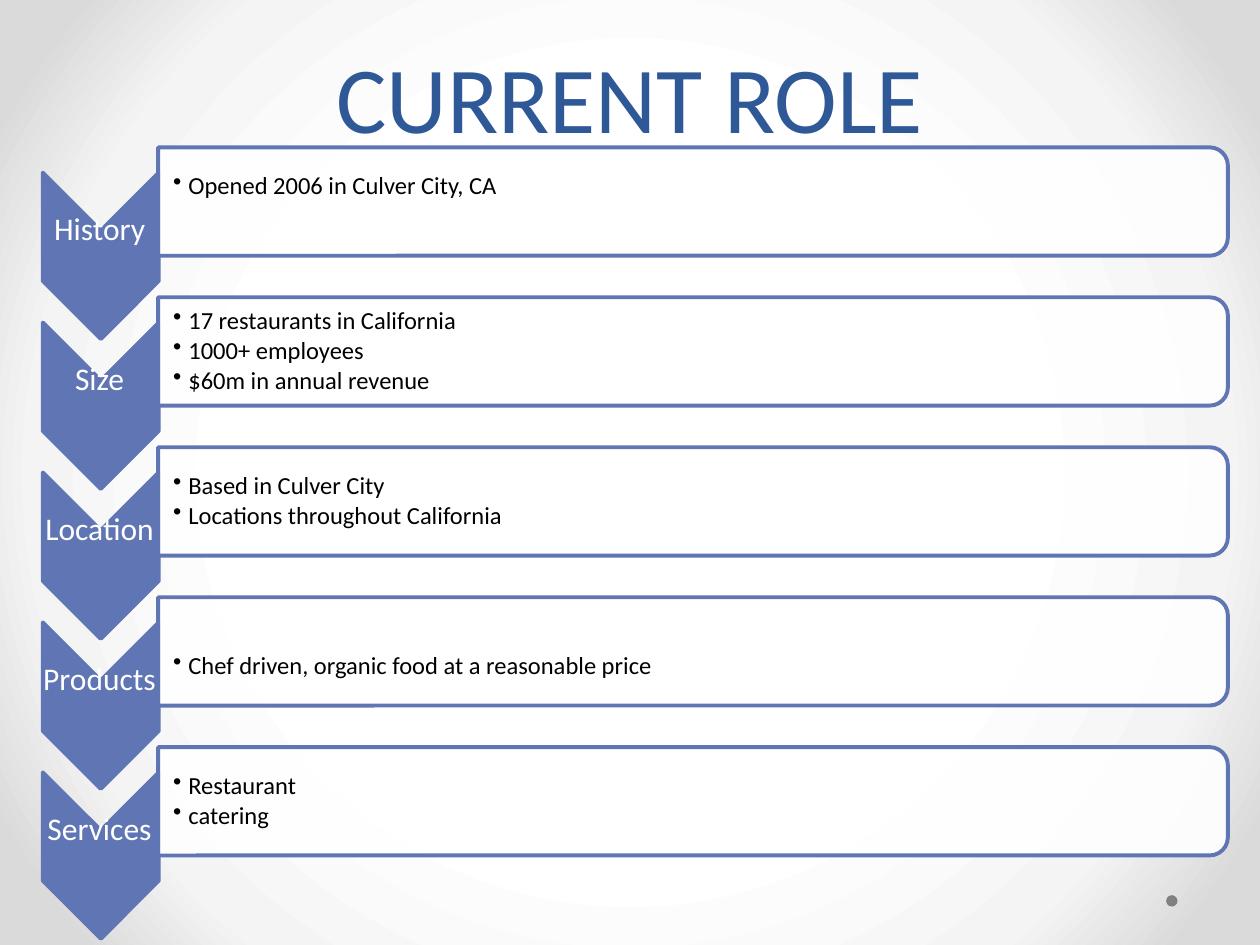
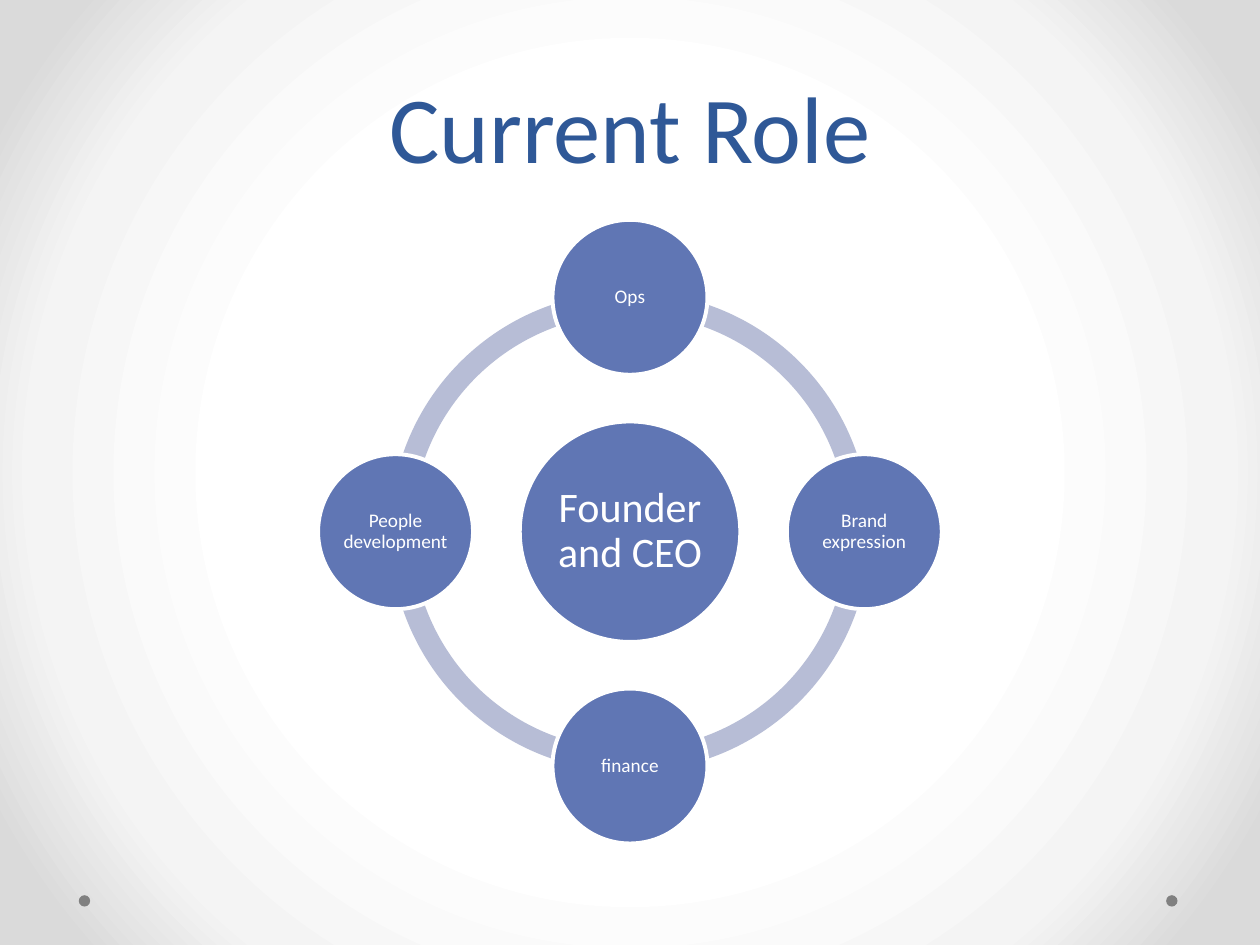
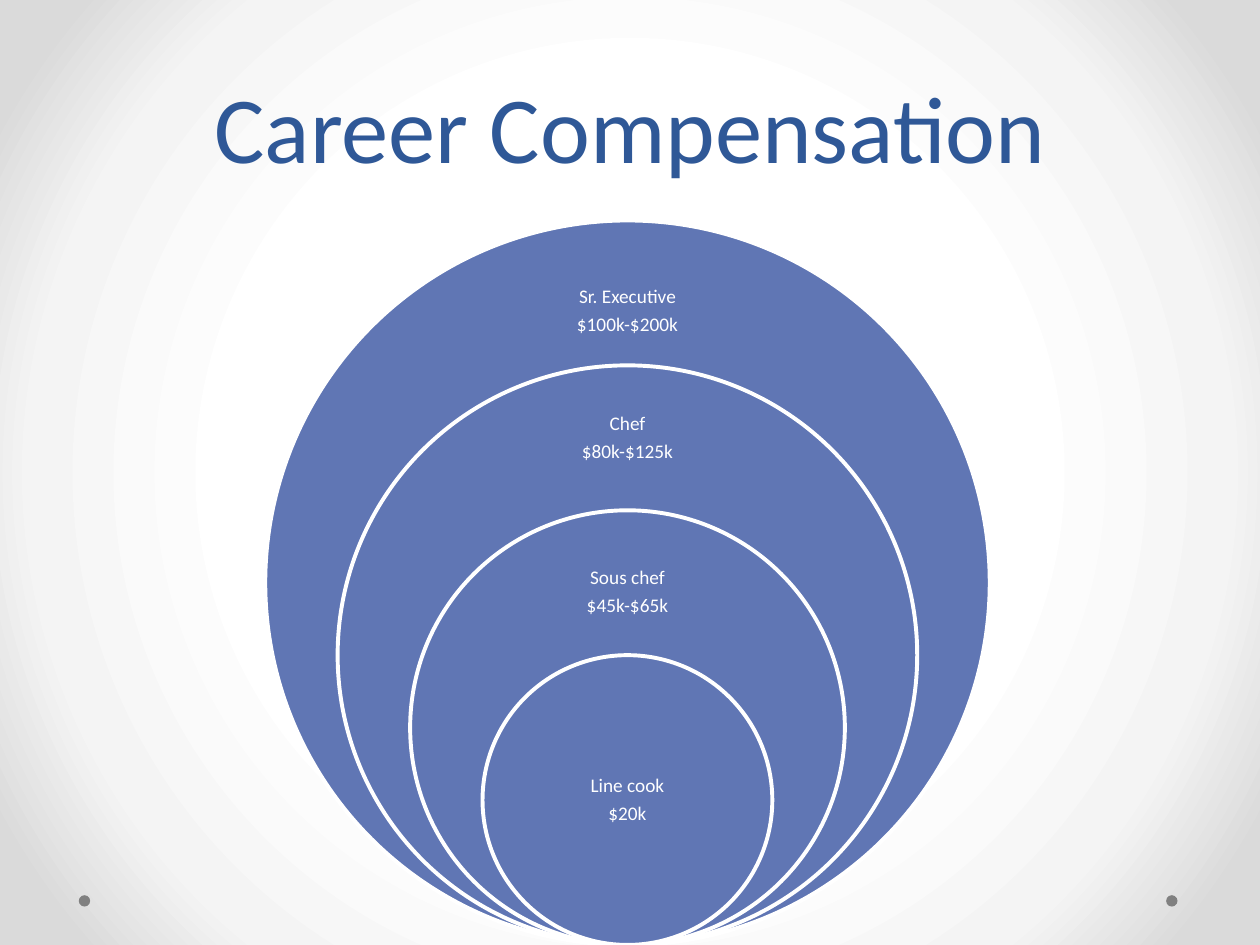
import math

from lxml import etree
from pptx import Presentation
from pptx.dml.color import RGBColor
from pptx.enum import shapes, text
from pptx.oxml import ns
from pptx.util import Inches, Pt

FONT = "Calibri"
COLORS = {
    "title": "2F5897",
    "accent": "6076B4",
    "ring": "B7BDD6",
    "white": "FFFFFF",
    "black": "000000",
    "dot": "808080",
}
BACKGROUND_STOPS = [(50, "FFFFFF"), (76, "F4F4F4"), (92, "DADADA")]

ROLE_ROWS = [  # label, bullets, vertical shift of the bullets
    ("History", ["Opened 2006 in Culver City, CA"], -0.12),
    ("Size", ["17 restaurants in California", "1000+ employees",
              "$60m in annual revenue"], 0),
    ("Location", ["Based in Culver City", "Locations throughout California"], 0),
    ("Products", ["Chef driven, organic food at a reasonable price"], 0.12),
    ("Services", ["Restaurant", "catering"], 0),
]
DUTIES = ["Ops", "Brand expression", "finance", "People development"]
PAY_LEVELS = [  # diameter, label centre, lines
    (5.75, 2.47, ["Sr. Executive", "$100k-$200k"]),
    (4.6, 3.48, ["Chef", "$80k-$125k"]),
    (3.45, 4.7, ["Sous chef", "$45k-$65k"]),
    (2.3, 6.35, ["Line cook", "$20k"]),
]


def rgb(name):
    return RGBColor.from_string(COLORS[name])


def centred_box(center_x, center_y, width, height):
    return [Inches(value) for value in
            (center_x - width / 2, center_y - height / 2, width, height)]


# Shared look
def set_background(master):
    master.background.fill.gradient()
    gradient = master.element.find(".//" + ns.qn("a:gradFill"))
    for child in list(gradient):
        gradient.remove(child)
    stops = etree.SubElement(gradient, ns.qn("a:gsLst"))
    for position, color in BACKGROUND_STOPS:
        stop = etree.SubElement(stops, ns.qn("a:gs"), pos=str(position * 1000))
        etree.SubElement(stop, ns.qn("a:srgbClr"), val=color)
    shade = etree.SubElement(gradient, ns.qn("a:path"))
    shade.set("path", "circle")
    etree.SubElement(shade, ns.qn("a:fillToRect"),
                     l="50000", t="50000", r="50000", b="50000")


def start_slide(presentation, title_text, top=0.17, height=1.33):
    slide = presentation.slides.add_slide(presentation.slide_layouts[5])
    for center_x in (9.3, 0.67):
        add_shape(slide, shapes.MSO_SHAPE.OVAL, (center_x, 7.15, 0.09, 0.09), "dot")
    title = slide.shapes.title
    title.left, title.top = Inches(0.5), Inches(top)
    title.width, title.height = Inches(9), Inches(height)
    frame = title.text_frame
    frame.text = title_text
    frame.auto_size = text.MSO_AUTO_SIZE.NONE
    frame.vertical_anchor = text.MSO_ANCHOR.BOTTOM
    paragraph = frame.paragraphs[0]
    paragraph.alignment = text.PP_ALIGN.CENTER
    paragraph.line_spacing = Pt(58)
    set_font(paragraph, 54, "title")
    return slide


# Elements
def add_shape(slide, kind, box, fill, line=None, rotation=0):
    """Draw a shape; box is centre x, centre y, width, height."""
    shape = slide.shapes.add_shape(kind, *centred_box(*box))
    shape.shadow.inherit = False
    shape.rotation = rotation
    shape.fill.solid()
    shape.fill.fore_color.rgb = rgb(fill)
    if line:
        shape.line.color.rgb = rgb(line)
        shape.line.width = Pt(2.25)
    else:
        shape.line.fill.background()
    return shape


def set_font(paragraph, size, color):
    paragraph.font.name = FONT
    paragraph.font.size = Pt(size)
    paragraph.font.color.rgb = rgb(color)


def write_lines(shape, lines, size, color="white", inset=0.02, spacing=0.35,
                alignment=text.PP_ALIGN.CENTER):
    frame = shape.text_frame
    frame.word_wrap = True
    frame.vertical_anchor = text.MSO_ANCHOR.MIDDLE
    frame.margin_left = frame.margin_right = Inches(inset)
    frame.margin_top = frame.margin_bottom = Inches(inset)
    frame.text = "\n".join(lines)
    for paragraph in frame.paragraphs:
        paragraph.alignment = alignment
        paragraph.line_spacing = 0.9
        paragraph.space_after = Pt(size * spacing)
        set_font(paragraph, size, color)


def add_label(slide, box, lines, size, **style):
    label = slide.shapes.add_textbox(*centred_box(*box))
    write_lines(label, lines, size, **style)
    return label


def add_bullets(slide, box, lines):
    label = add_label(slide, box, lines, 14, color="black", inset=0.01,
                      spacing=0.15, alignment=text.PP_ALIGN.LEFT)
    label.text_frame.margin_left = Inches(0.11)
    for paragraph in label.text_frame.paragraphs:
        properties = paragraph._p.get_or_add_pPr()
        properties.set("marL", str(Inches(0.12)))
        properties.set("indent", str(-Inches(0.12)))
        bullet = etree.Element(ns.qn("a:buChar"), char="•")
        properties.find(ns.qn("a:spcAft")).addnext(bullet)


def set_opacity(shape, percent):
    color = shape.element.spPr.find(ns.qn("a:solidFill"))[0]
    etree.SubElement(color, ns.qn("a:alpha"), val=str(percent * 1000))


def add_role_row(slide, center_y, label, bullets, shift):
    add_shape(slide, shapes.MSO_SHAPE.CHEVRON, (0.8, center_y + 0.43, 1.32, 0.92),
              "accent", "accent", rotation=90)
    add_label(slide, (0.79, center_y + 0.23, 0.92, 0.4), [label], 18, inset=0.01)
    panel = add_shape(slide, shapes.MSO_SHAPE.ROUND_2_SAME_RECTANGLE,
                      (5.5, center_y, 0.86, 8.49), "white", "accent", rotation=90)
    set_opacity(panel, 90)
    add_bullets(slide, (5.49, center_y + shift, 8.45, 0.77), bullets)


def add_circle(slide, center_x, center_y, diameter):
    return add_shape(slide, shapes.MSO_SHAPE.OVAL,
                     (center_x, center_y, diameter, diameter), "accent", "white")


# Slides
def build_role_rows(presentation):
    slide = start_slide(presentation, "CURRENT ROLE", top=0.01, height=1.25)
    for index, row in enumerate(ROLE_ROWS):
        add_role_row(slide, 1.6 + index * 1.19, *row)


def build_role_ring(presentation):
    slide = start_slide(presentation, "Current Role")
    center_x, center_y, radius = 5, 4.22, 1.86
    quarter, full_turn = 54, 216  # arc angles in units of 100000/60000 degrees
    for start in (108, 54, 0, 162):
        arc = add_shape(slide, shapes.MSO_SHAPE.BLOCK_ARC,
                        (center_x, center_y, 3.81, 3.81), "ring")
        arc.adjustments[0] = start
        arc.adjustments[1] = (start + quarter) % full_turn
        arc.adjustments[2] = 0.046
    hub = add_circle(slide, center_x, center_y, 1.75)
    write_lines(hub, ["Founder and CEO"], 24, inset=0.03)
    for index, duty in enumerate(DUTIES):
        angle = math.tau * index / len(DUTIES)
        circle = add_circle(slide, center_x + radius * math.sin(angle),
                            center_y - radius * math.cos(angle), 1.23)
        write_lines(circle, [duty], 11)


def build_compensation(presentation):
    slide = start_slide(presentation, "Career Compensation")
    center_x, bottom = 4.98, 7.5
    for diameter, label_y, lines in PAY_LEVELS:
        add_circle(slide, center_x, bottom - diameter / 2, diameter)
        add_label(slide, (center_x, label_y, 1.61, 0.8), lines, 11, inset=0.09)


def main():
    presentation = Presentation()
    presentation.slide_width = Inches(10)
    presentation.slide_height = Inches(7.5)
    set_background(presentation.slide_master)
    build_role_rows(presentation)
    build_role_ring(presentation)
    build_compensation(presentation)
    presentation.save("out.pptx")


if __name__ == "__main__":
    main()
